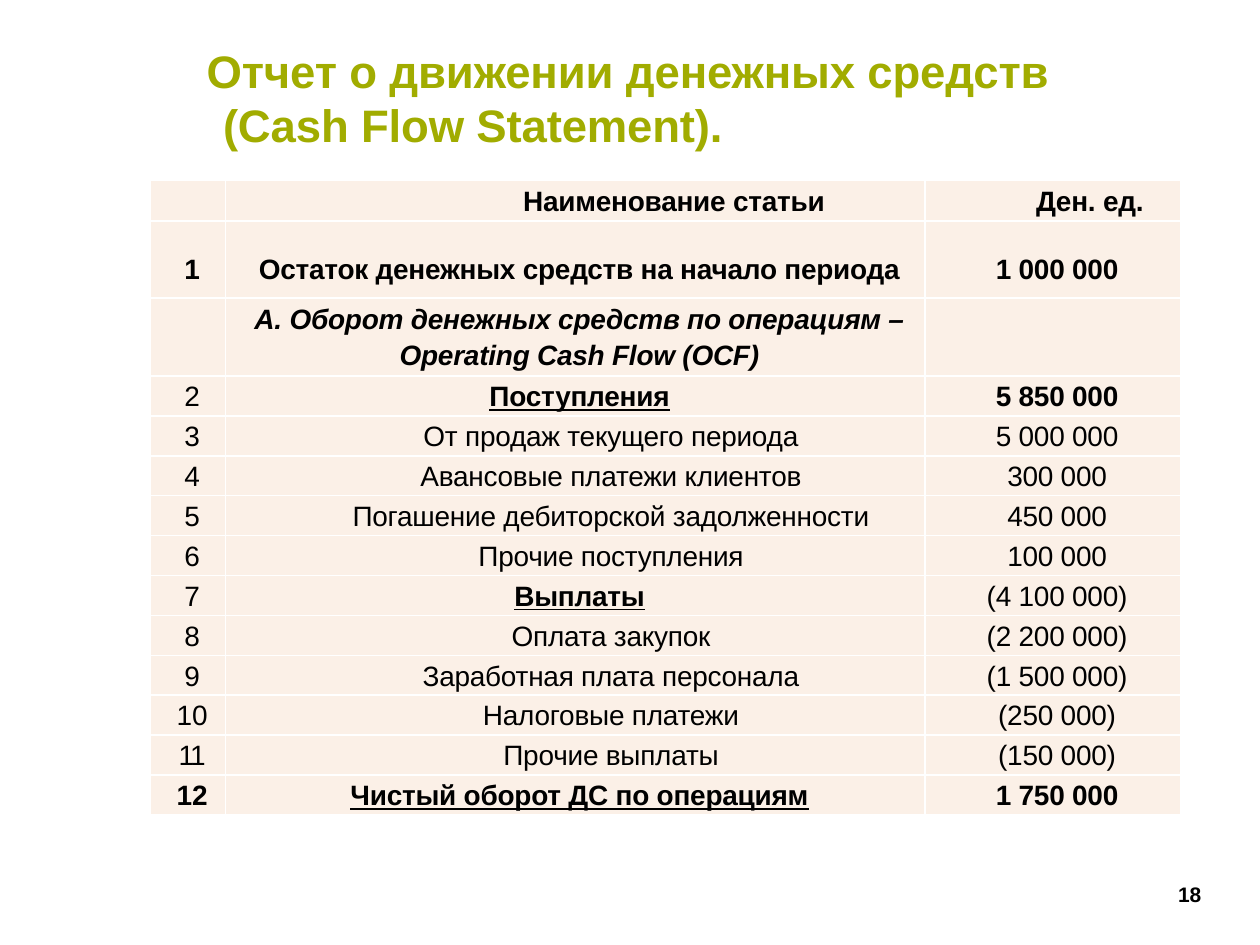
from pptx import Presentation
from pptx.dml.color import RGBColor
from pptx.enum.text import MSO_ANCHOR, PP_ALIGN
from pptx.oxml import parse_xml
from pptx.oxml.ns import nsdecls
from pptx.util import Inches, Pt

LEFT, CENTER = PP_ALIGN.LEFT, PP_ALIGN.CENTER
TOP, MIDDLE = MSO_ANCHOR.TOP, MSO_ANCHOR.MIDDLE
FONT = "Arial"
COLORS = {"title": "A1AC00", "text": "000000", "cell": "FBF0E7", "border": "FFFFFF"}
COL_WIDTHS = [0.6, 5.55, 2.03]
TALL_ROWS = {1: 0.61, 2: 0.62}
ROW_HEIGHT = (5.03 - sum(TALL_ROWS.values())) / 12
BASE, ITEM = 0.07, 0.57
BOLD = {"bold": True}
HEADING = {"bold": True, "underline": True}
SECTION = {"bold": True, "italic": True}
PLAIN = {}
INDENTED = {"margin": ITEM}

ROWS = [
    [("", PLAIN), ("Наименование статьи", {"bold": True, "margin": 1.57}),
     ("Ден. ед.", {"bold": True, "margin": 0.59})],
    [("1", BOLD), ("Остаток денежных средств на начало периода", BOLD), ("1 000 000", BOLD)],
    [("", PLAIN),
     ("A. Оборот денежных средств по операциям –\nOperating Cash Flow (OCF)", SECTION),
     ("", PLAIN)],
    [("2", PLAIN), ("Поступления", HEADING), ("5 850 000", BOLD)],
    [("3", PLAIN), ("От продаж текущего периода", INDENTED), ("5 000 000", PLAIN)],
    [("4", PLAIN), ("Авансовые платежи клиентов", INDENTED), ("300 000", PLAIN)],
    [("5", PLAIN), ("Погашение дебиторской задолженности", INDENTED), ("450 000", PLAIN)],
    [("6", PLAIN), ("Прочие поступления", INDENTED), ("100 000", PLAIN)],
    [("7", PLAIN), ("Выплаты", HEADING), ("(4 100 000)", PLAIN)],
    [("8", PLAIN), ("Оплата закупок", INDENTED), ("(2 200 000)", PLAIN)],
    [("9", PLAIN), ("Заработная плата персонала", INDENTED), ("(1 500 000)", PLAIN)],
    [("10", PLAIN), ("Налоговые платежи", INDENTED), ("(250 000)", PLAIN)],
    [("11", {"spacing": -1.2}), ("Прочие выплаты", INDENTED), ("(150 000)", PLAIN)],
    [("12", BOLD), ("Чистый оборот ДС по операциям", HEADING), ("1 750 000", BOLD)],
]


def write_text(tf, text, size=16, color="text", bold=False, italic=False,
               underline=False, align=CENTER, margin=BASE, indent=0, spacing=-0.1):
    tf.word_wrap = True
    tf.text = text
    for i, p in enumerate(tf.paragraphs):
        p.alignment = align
        p.line_spacing = 1.0
        p.space_before = Pt(2.9 if i else 0)
        pPr = p._p.get_or_add_pPr()
        pPr.set("marL", str(Inches(margin)))
        pPr.set("indent", str(Inches(indent)))
        for r in p.runs:
            r.font.name = FONT
            r.font.size = Pt(size)
            r.font.bold = bold
            r.font.italic = italic
            r.font.underline = underline
            r.font.color.rgb = RGBColor.from_string(COLORS[color])
            r._r.get_or_add_rPr().set("spc", str(round(spacing * 100)))


def set_margins(box, top=0):
    box.margin_left = box.margin_right = box.margin_bottom = 0
    box.margin_top = Inches(top)


def set_borders(cell):
    tcPr = cell._tc.get_or_add_tcPr()
    for i, side in enumerate(("lnL", "lnR", "lnT", "lnB")):
        tcPr.insert(i, parse_xml(
            f'<a:{side} {nsdecls("a")} w="{Pt(1)}"><a:solidFill>'
            f'<a:srgbClr val="{COLORS["border"]}"/></a:solidFill></a:{side}>'))


def add_title(slide):
    sp = slide.shapes.title
    sp.left, sp.top, sp.width, sp.height = map(Inches, (1.62, 0.33, 6.9, 0.89))
    tf = sp.text_frame
    set_margins(tf, 0.01)
    tf.vertical_anchor = TOP
    write_text(tf, "Отчет о движении денежных средств\v(Cash Flow Statement).",
               size=26, color="title", bold=True, align=LEFT, margin=0.15, indent=-0.13)


def add_cash_flow_table(slide):
    frame = slide.shapes.add_table(len(ROWS), len(COL_WIDTHS), Inches(1.19), Inches(1.43),
                                   Inches(sum(COL_WIDTHS)), Inches(5.03))
    table = frame.table
    table.first_row = table.horz_banding = False
    for col, width in zip(table.columns, COL_WIDTHS):
        col.width = Inches(width)
    for i, row in enumerate(ROWS):
        table.rows[i].height = Inches(TALL_ROWS.get(i, ROW_HEIGHT))
        for j, (text, style) in enumerate(row):
            cell = table.cell(i, j)
            set_margins(cell, 0.17 if i == 1 else 0.02)
            cell.vertical_anchor = MIDDLE
            cell.fill.solid()
            cell.fill.fore_color.rgb = RGBColor.from_string(COLORS["cell"])
            set_borders(cell)
            if text:
                write_text(cell.text_frame, text, **style)


def add_page_number(slide):
    sp = slide.shapes.add_textbox(Inches(9.32), Inches(7), Inches(0.24), Inches(0.2))
    set_margins(sp.text_frame)
    write_text(sp.text_frame, "18", size=12, bold=True, align=LEFT, margin=0.03)


def main():
    prs = Presentation()
    prs.slide_width, prs.slide_height = Inches(10), Inches(7.5)
    slide = prs.slides.add_slide(prs.slide_layouts[5])
    add_title(slide)
    add_cash_flow_table(slide)
    add_page_number(slide)
    prs.save("out.pptx")


if __name__ == "__main__":
    main()
